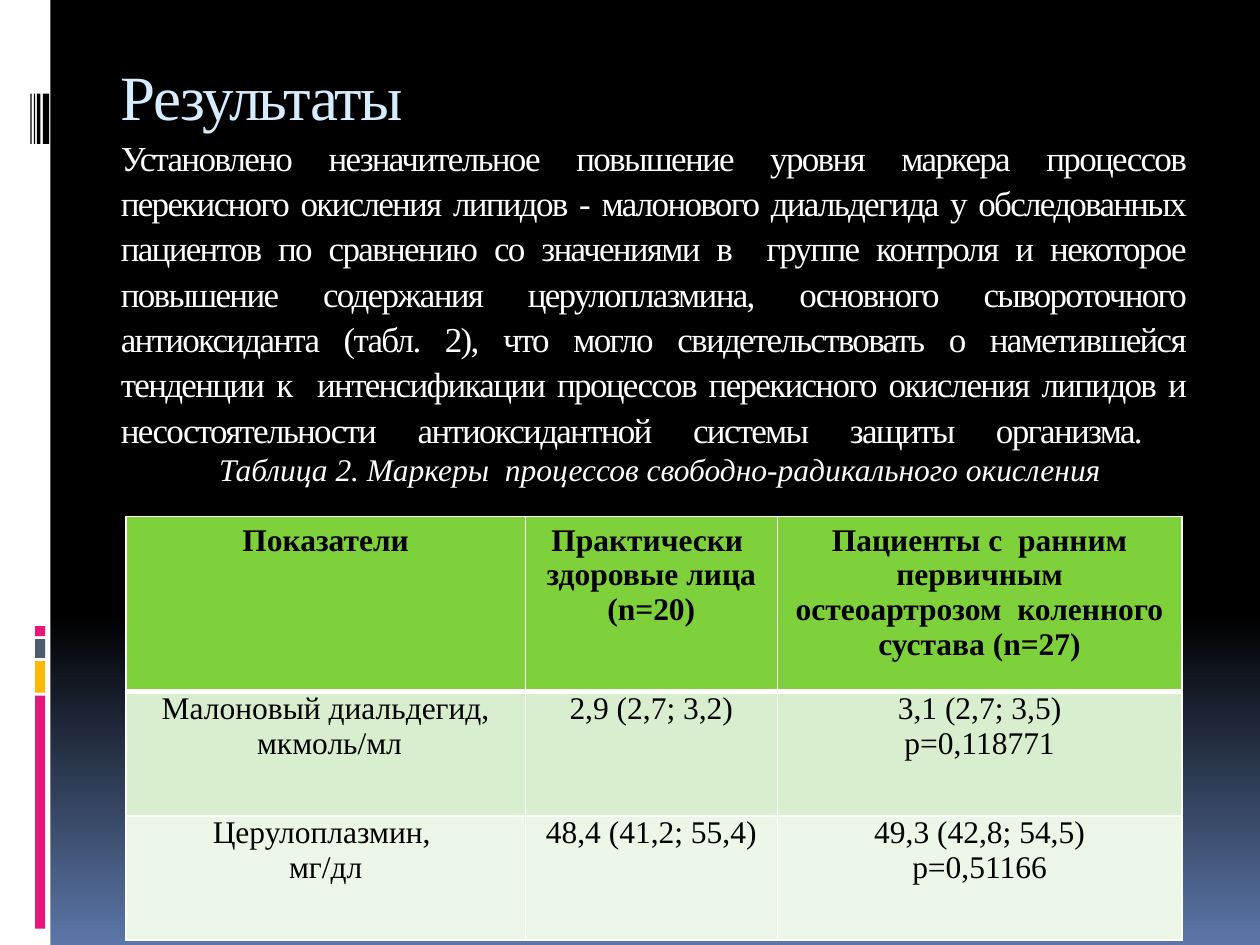
from lxml import etree
from pptx import Presentation
from pptx.dml.color import RGBColor
from pptx.enum.shapes import MSO_SHAPE
from pptx.enum.text import MSO_ANCHOR, PP_ALIGN
from pptx.oxml.ns import qn
from pptx.util import Pt

RECTANGLE = MSO_SHAPE.RECTANGLE
TOP = MSO_ANCHOR.TOP
CENTER, JUSTIFY = PP_ALIGN.CENTER, PP_ALIGN.JUSTIFY

FONT = "Times New Roman"
COLORS = {
    "white": "FFFFFF", "black": "000000", "dusk": "5B77A8", "title": "D6ECFF",
    "pink": "EA157A", "amber": "FEB80A", "slate": "4E5B6F",
    "header": "7FD13B", "band": "D8EECE", "light": "ECF7E8",
}

HEADING = "Результаты"
FINDINGS = (
    "Установлено незначительное повышение уровня маркера процессов перекисного "
    "окисления липидов - малонового диальдегида у обследованных пациентов по "
    "сравнению со значениями в  группе контроля и некоторое повышение содержания "
    "церулоплазмина, основного сывороточного антиоксиданта (табл. 2), что могло "
    "свидетельствовать о наметившейся тенденции к  интенсификации процессов "
    "перекисного окисления липидов и несостоятельности антиоксидантной системы "
    "защиты организма. "
)
CAPTION = "Таблица 2. Маркеры  процессов свободно-радикального окисления"
MARKERS = [
    ["Показатели", "Практически  здоровые лица (n=20)",
     "Пациенты с  ранним первичным остеоартрозом  коленного сустава (n=27)"],
    ["Малоновый диальдегид,\n мкмоль/мл", "2,9 (2,7; 3,2)",
     "3,1 (2,7; 3,5)\nр=0,118771"],
    ["Церулоплазмин, \nмг/дл", "48,4 (41,2; 55,4)",
     "49,3 (42,8; 54,5)\nр=0,51166"],
]


def rgb(name):
    return RGBColor.from_string(COLORS[name])


def style(font, size, color, bold=False, italic=False):
    font.name = FONT
    font.size = Pt(size)
    font.bold = bold
    font.italic = italic
    font.color.rgb = rgb(color)


def paint_background(slide):
    fill = slide.background.fill
    fill.gradient()
    fill.gradient_angle = 270
    for stop, (color, position) in zip(
            fill.gradient_stops, [("black", 0.65), ("dusk", 1)]):
        stop.color.rgb = rgb(color)
        stop.position = position


def add_block(slide, color, left, top, width, height):
    block = slide.shapes.add_shape(
        RECTANGLE, Pt(left), Pt(top), Pt(width), Pt(height))
    block.shadow.inherit = False
    block.fill.solid()
    block.fill.fore_color.rgb = rgb(color)
    block.line.fill.background()


def add_sidebar(slide, left, top, width, height):
    add_block(slide, "white", left, top, width, height)
    for color, offset, length in [("pink", 397.5, 133.2), ("amber", 377.8, 18),
                                  ("slate", 365.2, 10.8), ("pink", 357.8, 5.7)]:
        add_block(slide, color, left + 20, top + offset, 5.8, length)
    for offset, thickness in [(24.5, 3.6), (21.1, 2), (19.4, 0.7), (17.4, 0.7)]:
        add_block(slide, "black", left + offset, top + 53.5, thickness, 28.8)


def add_text_frame(slide, left, top, width, height):
    frame = slide.shapes.add_textbox(
        Pt(left), Pt(top), Pt(width), Pt(height)).text_frame
    frame.word_wrap = True
    frame.vertical_anchor = TOP
    return frame


def add_findings(slide, left, top, width, height):
    frame = add_text_frame(slide, left, top, width, height)
    frame.margin_top = Pt(7)
    paragraph = frame.paragraphs[0]
    paragraph.alignment = JUSTIFY
    paragraph.line_spacing = 1.08
    for text, size, color in [(HEADING, 36, "title"), (FINDINGS, 20, "white")]:
        run = paragraph.add_run()
        run.text = text
        style(run.font, size, color)
        run.font._element.set("spc", "-100")
        paragraph.add_line_break()


def add_caption(slide, left, top, width, height):
    paragraph = add_text_frame(slide, left, top, width, height).paragraphs[0]
    paragraph.text = CAPTION
    paragraph.alignment = CENTER
    style(paragraph.font, 18, "white", italic=True)


def set_borders(cell, bottom_width):
    properties = cell._tc.get_or_add_tcPr()
    widths = {"a:lnL": 1, "a:lnR": 1, "a:lnT": 1, "a:lnB": bottom_width}
    for index, (side, width) in enumerate(widths.items()):
        border = etree.Element(qn(side), w=str(Pt(width)))
        fill = etree.SubElement(border, qn("a:solidFill"))
        etree.SubElement(fill, qn("a:srgbClr"), val=COLORS["white"])
        properties.insert(index, border)


def add_marker_table(slide, left, top, width, height):
    table = slide.shapes.add_table(
        len(MARKERS), len(MARKERS[0]),
        Pt(left), Pt(top), Pt(width), Pt(height)).table
    header_height = 100
    first_width, second_width = 228.2, 144
    column_widths = [first_width, second_width, width - first_width - second_width]
    for column, column_width in zip(table.columns, column_widths):
        column.width = Pt(column_width)
    for index, row in enumerate(table.rows):
        is_header = index == 0
        row.height = Pt(header_height if is_header else (height - header_height) / 2)
        for cell, text in zip(row.cells, MARKERS[index]):
            cell.text = text
            cell.fill.solid()
            cell.fill.fore_color.rgb = rgb(["header", "band", "light"][index])
            set_borders(cell, 3 if is_header else 1)
            if not is_header:
                cell.margin_left = cell.margin_right = Pt(5)
                cell.margin_top = cell.margin_bottom = 0
            for paragraph in cell.text_frame.paragraphs:
                paragraph.alignment = CENTER
                style(paragraph.font, 18, "black", bold=is_header)


def main():
    presentation = Presentation()
    presentation.slide_width, presentation.slide_height = Pt(720), Pt(540)
    slide = presentation.slides.add_slide(presentation.slide_layouts[6])
    paint_background(slide)
    add_sidebar(slide, 0, 0, 28.8, 540)
    add_findings(slide, 62, 22.3, 622, 236)
    add_marker_table(slide, 72, 295.2, 603.4, 242)
    add_caption(slide, 73.4, 253.4, 607.7, 51)
    presentation.save("out.pptx")


if __name__ == "__main__":
    main()
